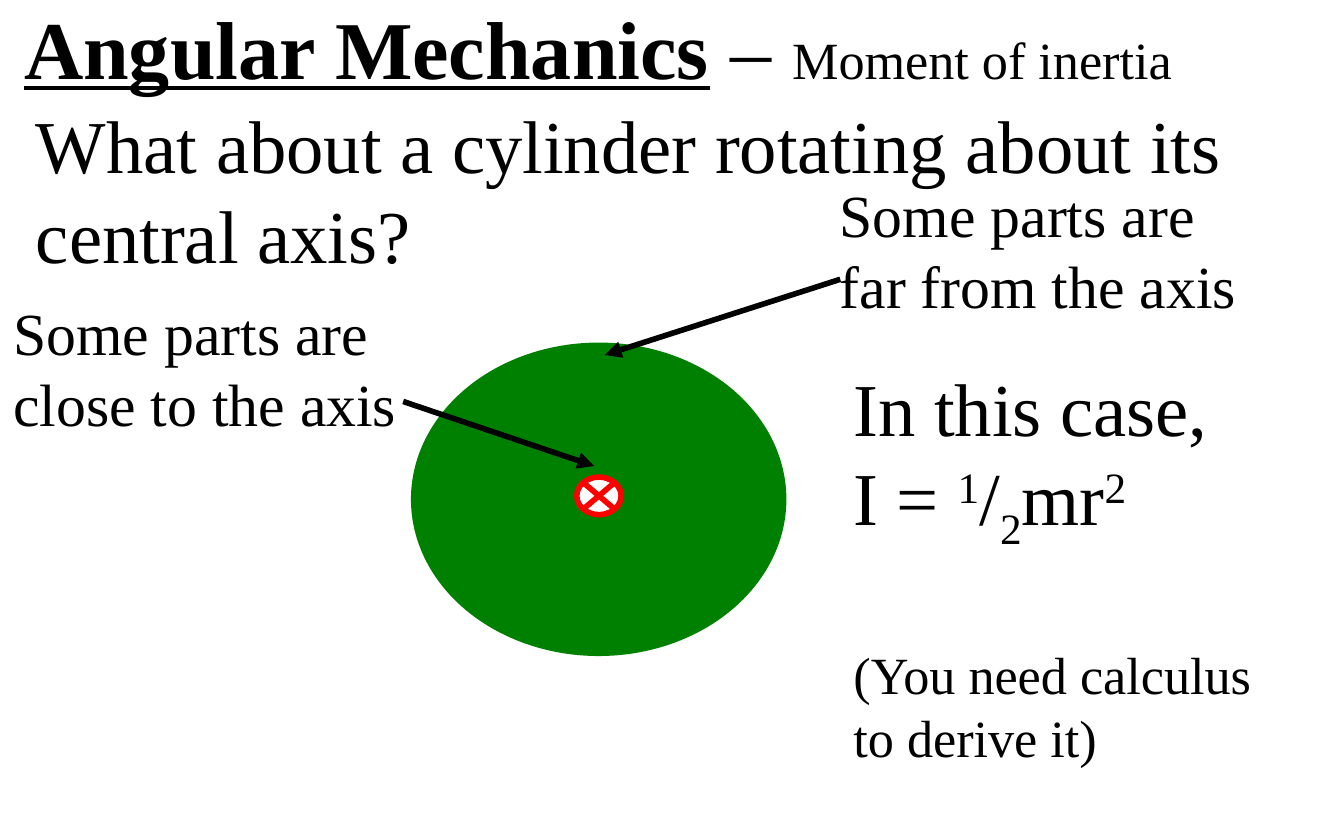
from dataclasses import dataclass, field

from lxml import etree
from pptx import Presentation
from pptx.dml.color import RGBColor
from pptx.enum import shapes, text
from pptx.oxml import ns
from pptx.util import Cm, Pt

COLORS = {"ink": "000000", "cylinder": "008000", "axis": "FF0000", "paper": "FFFFFF"}
FONT = "Times New Roman"
LINE_WIDTH = Pt(3)


@dataclass
class Run:
    text: str
    size: float
    formats: dict = field(default_factory=dict)
    baseline: int = 0  # percent of the text size


@dataclass
class Box:
    left: float
    top: float
    width: float
    height: float

    def lengths(self) -> tuple:
        return Cm(self.left), Cm(self.top), Cm(self.width), Cm(self.height)


@dataclass
class Callout:
    lines: list[str]
    box: Box
    start: tuple[float, float]
    end: tuple[float, float]


def color(name: str) -> RGBColor:
    return RGBColor.from_string(COLORS[name])


def write(shape, paragraphs: list[list[Run]], wrap: bool = True) -> None:
    frame = shape.text_frame
    frame_formats = {
        "word_wrap": wrap,
        "vertical_anchor": text.MSO_ANCHOR.TOP,
        "auto_size": text.MSO_AUTO_SIZE.SHAPE_TO_FIT_TEXT,
    }
    for name, value in frame_formats.items():
        setattr(frame, name, value)
    for index, runs in enumerate(paragraphs):
        paragraph = frame.paragraphs[0] if index == 0 else frame.add_paragraph()
        paragraph.alignment = text.PP_ALIGN.LEFT
        for item in runs:
            run = paragraph.add_run()
            run.text = item.text
            formats = {"name": FONT, "size": Pt(item.size), **item.formats}
            for name, value in formats.items():
                setattr(run.font, name, value)
            run.font.color.rgb = color("ink")
            if item.baseline:
                run.font._element.set("baseline", str(item.baseline * 1000))


def add_text(parent, box: Box, paragraphs: list[list[Run]], wrap: bool = True):
    shape = parent.add_textbox(*box.lengths())
    write(shape, paragraphs, wrap)
    return shape


def add_disc(parent, kind, box: Box, fill: str, line: str) -> None:
    shape = parent.add_shape(kind, *box.lengths())
    shape.shadow.inherit = False
    shape.fill.solid()
    shape.fill.fore_color.rgb = color(fill)
    shape.line.color.rgb = color(line)
    shape.line.width = LINE_WIDTH


def add_arrow(parent, start: tuple[float, float], end: tuple[float, float]) -> None:
    points = [Cm(value) for value in (*start, *end)]
    arrow = parent.add_connector(shapes.MSO_CONNECTOR.STRAIGHT, *points)
    arrow.line.color.rgb = color("ink")
    arrow.line.width = LINE_WIDTH
    etree.SubElement(arrow.line._get_or_add_ln(), ns.qn("a:tailEnd"), type="triangle")
    etree.SubElement(arrow._element.spPr, ns.qn("a:effectLst"))


def add_callout(slide, callout: Callout) -> None:
    group = slide.shapes.add_group_shape()
    add_arrow(group.shapes, callout.start, callout.end)
    paragraphs = [[Run(line, 32)] for line in callout.lines]
    add_text(group.shapes, callout.box, paragraphs, wrap=False)


def main() -> None:
    presentation = Presentation()
    presentation.slide_width, presentation.slide_height = Cm(25.4), Cm(15.88)
    slide = presentation.slides.add_slide(presentation.slide_layouts[5])

    # Title
    title = slide.shapes.title
    title_box = Box(0.2, -0.18, 22.4, 2.13)
    title.left, title.top, title.width, title.height = title_box.lengths()
    write(title, [[
        Run("Angular Mechanics", 44, {"bold": True, "underline": True}),
        Run(" – ", 44),
        Run("Moment of inertia", 28),
    ]], wrap=False)

    # Cylinder seen along its axis
    add_disc(slide.shapes, shapes.MSO_SHAPE.OVAL,
             Box(7.82, 6.53, 6.99, 5.82), "cylinder", "cylinder")
    add_disc(slide.shapes, shapes.MSO_SHAPE.FLOWCHART_SUMMING_JUNCTION,
             Box(10.9, 9.02, 0.84, 0.71), "paper", "axis")

    # Question
    question = "What about a cylinder rotating about its central axis?"
    add_text(slide.shapes, Box(0.43, 1.75, 24.18, 3.68), [[Run(question, 40)]])

    # Labels with their arrows
    callouts = [
        Callout(["Some parts are", "close to the axis"],
                Box(0, 5.46, 7.82, 3), (7.62, 7.59), (11.23, 8.81)),
        Callout(["Some parts are", "far from the axis"],
                Box(15.62, 3.23, 8.08, 3), (15.88, 5.28), (11.43, 6.71)),
    ]
    for callout in callouts:
        add_callout(slide, callout)

    # Result
    result = add_text(slide.shapes, Box(15.88, 6.71, 8.71, 7.21), [
        [Run("In this case,", 40)],
        [Run("I = ", 40), Run("1", 40, baseline=30), Run("/", 40),
         Run("2", 40, baseline=-25), Run("mr", 40), Run("2", 40, baseline=30)],
        [Run("(You need calculus to derive it)", 28)],
    ])
    result.text_frame.paragraphs[-1].space_before = Pt(48)

    presentation.save("out.pptx")


if __name__ == "__main__":
    main()
